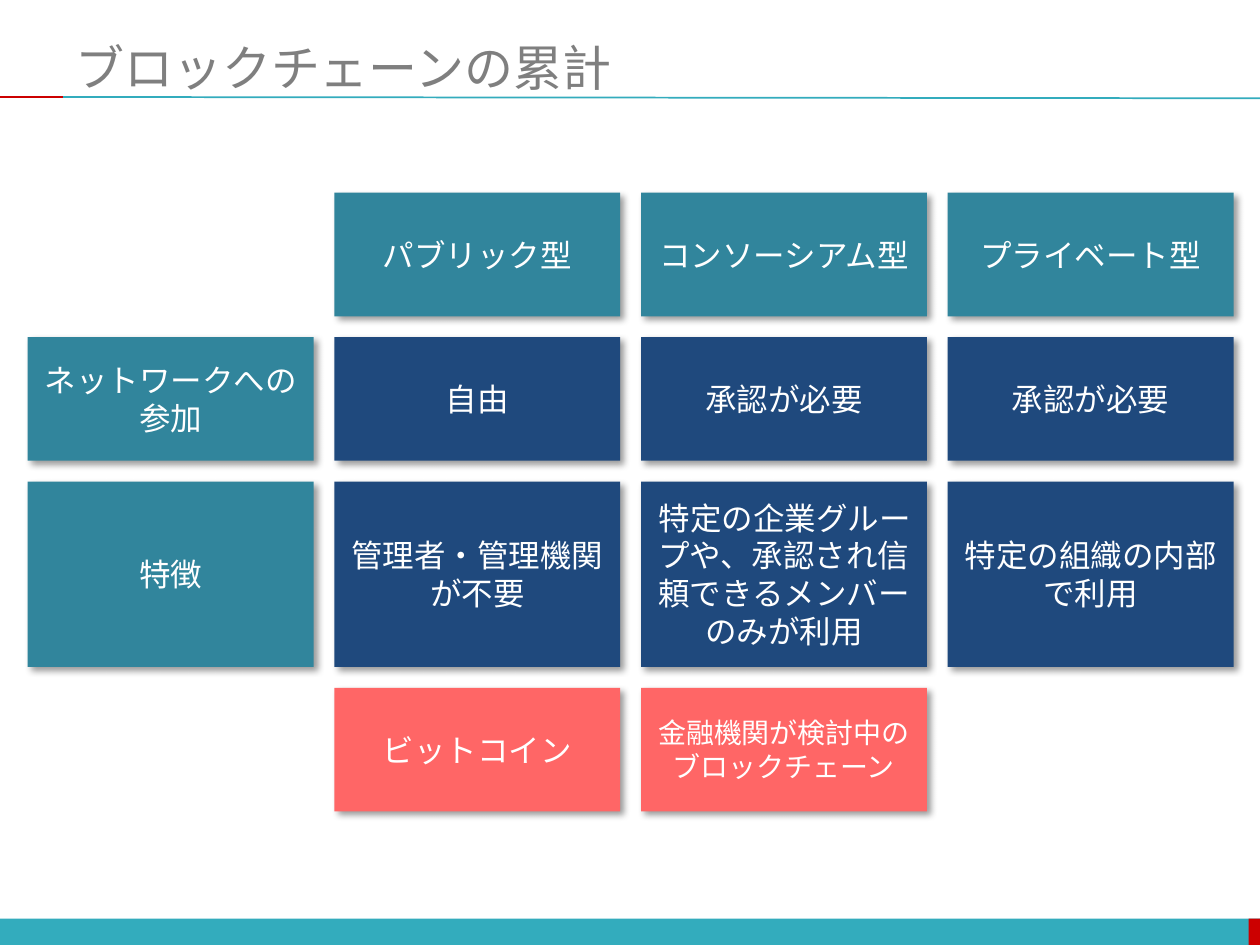
from lxml.etree import SubElement
from pptx import Presentation
from pptx.dml.color import RGBColor
from pptx.enum.shapes import MSO_CONNECTOR as CONNECTOR, MSO_SHAPE as SHAPE
from pptx.enum.text import MSO_ANCHOR as ANCHOR, PP_ALIGN as ALIGN
from pptx.oxml.ns import qn
from pptx.util import Inches, Pt

FONT = "Quicksand"
AQUA, RED, GREY, WHITE = "33ACBD", "CC0000", "7F7F7F", "FFFFFF"
TEAL, NAVY, CORAL = "31859C", "1F497D", "FF6666"
GAP = 0.165
ROWS = [
    (1, TEAL, ["", "パブリック型", "コンソーシアム型", "プライベート型"]),
    (1, NAVY, ["ネットワークへの参加", "自由", "承認が必要", "承認が必要"]),
    (1.5, NAVY, ["特徴", "管理者・管理機関\nが不要",
                 "特定の企業グループや、承認され信頼できるメンバーのみが利用",
                 "特定の組織の内部で利用"]),
    (1, CORAL, ["", "ビットコイン", "金融機関が検討中のブロックチェーン", ""]),
]
SMALL_CELL = (3, 2)


def rgb(color):
    return RGBColor.from_string(color)


def write(shape, text, size, color, align):
    tf = shape.text_frame
    tf.word_wrap = True
    tf.vertical_anchor = ANCHOR.MIDDLE
    tf.text = text
    for p in tf.paragraphs:
        p.alignment = align
        p.font.name = FONT
        p.font.size = Pt(size)
        p.font.color.rgb = rgb(color)


def add_rect(s, box, color):
    sp = s.shapes.add_shape(SHAPE.RECTANGLE, *map(Inches, box))
    sp.shadow.inherit = False
    sp.fill.solid()
    sp.fill.fore_color.rgb = rgb(color)
    sp.line.fill.background()
    return sp


def add_rule(s, ends, color):
    line = s.shapes.add_connector(CONNECTOR.STRAIGHT, *map(Inches, ends))
    line.line.color.rgb = rgb(color)
    line.line.width = Pt(1)
    SubElement(line._element.spPr, qn("a:effectLst"))


def cast_shadow(sp):
    effects = sp._element.spPr.find(qn("a:effectLst"))
    shadow = SubElement(effects, qn("a:outerShdw"), blurRad=str(Pt(4)),
                        dist=str(Pt(3)), dir=str(45 * 60000),
                        algn="tl", rotWithShape="0")
    black = SubElement(shadow, qn("a:srgbClr"), val="000000")
    SubElement(black, qn("a:alpha"), val="40000")


def header(s, box, text):
    left, top, width, height = box
    bottom = top + height
    add_rule(s, (left, bottom, left + width, bottom + 0.01), AQUA)
    add_rule(s, (0, bottom, left, bottom), RED)
    title = s.shapes.add_textbox(*map(Inches, box))
    write(title, text, 28, GREY, ALIGN.LEFT)


def footer(s, box):
    left, top, width, height = box
    tip = 0.09
    add_rect(s, box, AQUA)
    add_rect(s, (left + width - tip, top, tip, height), RED)


def comparison(s, box, rows):
    left, top, width, height = box
    columns = len(rows[0][2])
    col_w = (width - GAP * (columns - 1)) / columns
    unit = (height - GAP * (len(rows) - 1)) / sum(row[0] for row in rows)
    for i, (weight, color, texts) in enumerate(rows):
        for j, text in enumerate(texts):
            if text:
                cell = (left + j * (col_w + GAP), top, col_w, weight * unit)
                sp = add_rect(s, cell, color if j else TEAL)
                cast_shadow(sp)
                size = 16 if (i, j) == SMALL_CELL else 18
                write(sp, text, size, WHITE, ALIGN.CENTER)
        top += weight * unit + GAP


def main():
    prs = Presentation()
    prs.slide_width, prs.slide_height = Inches(10), Inches(7.5)
    s = prs.slides.add_slide(prs.slide_layouts[6])
    footer(s, (0, 7.29, 10, 0.22))
    header(s, (0.5, 0.3, 9.5, 0.47), "ブロックチェーンの累計")
    comparison(s, (0.22, 1.53, 9.57, 4.91), ROWS)
    prs.save("out.pptx")


if __name__ == "__main__":
    main()
